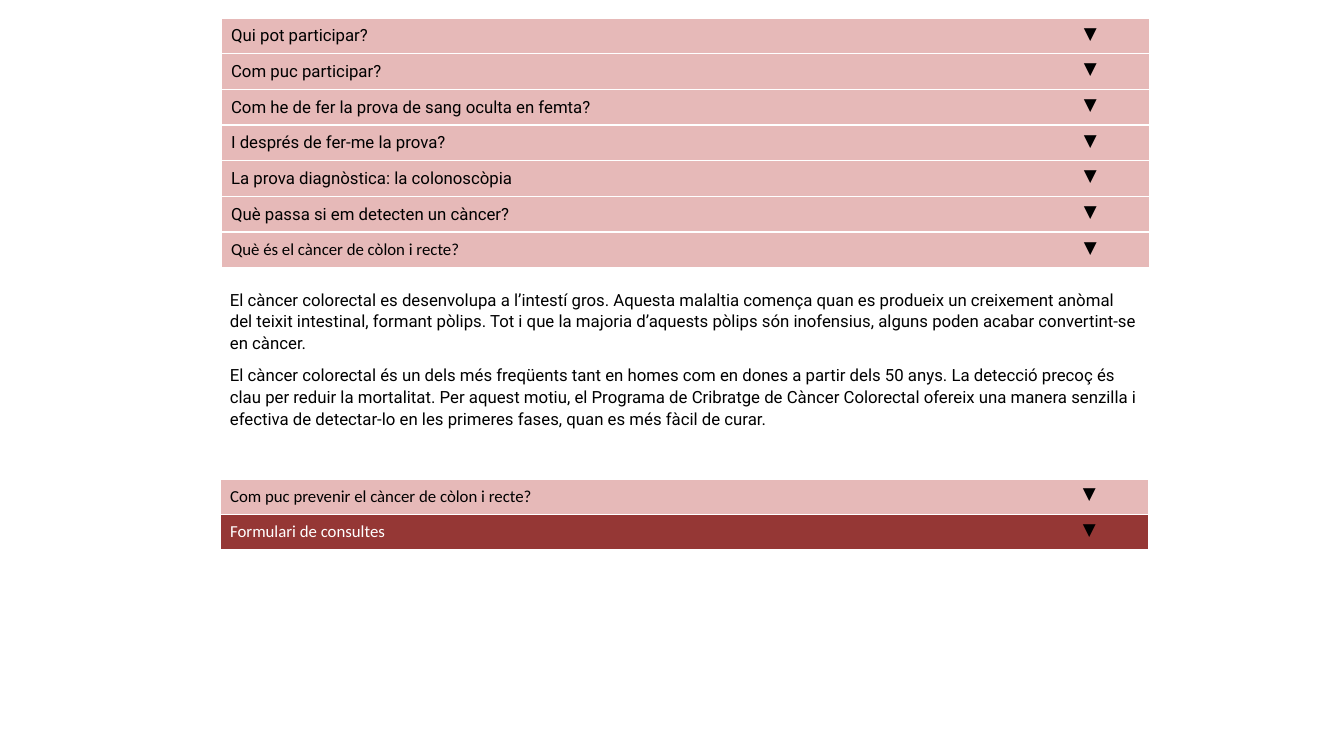
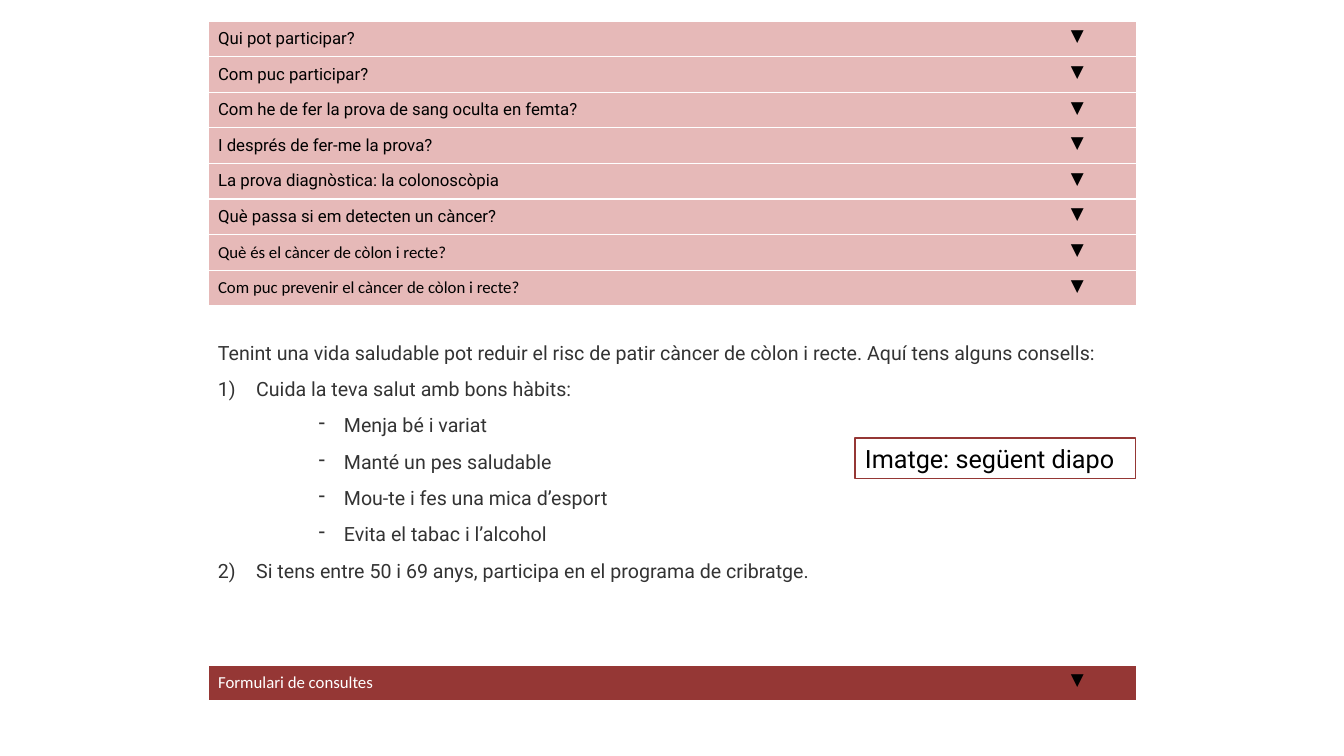
from lxml.etree import SubElement
from pptx import Presentation
from pptx.dml.color import RGBColor
from pptx.enum.text import MSO_ANCHOR, MSO_AUTO_SIZE, PP_ALIGN
from pptx.oxml import parse_xml
from pptx.oxml.ns import qn
from pptx.util import Emu, Inches, Pt

# Shared style
PINK = RGBColor(0xE6, 0xB9, 0xB8)
RED = RGBColor(0x95, 0x37, 0x35)
BLACK = RGBColor(0, 0, 0)
GREY = RGBColor(0x33, 0x33, 0x33)
WHITE = RGBColor(0xFF, 0xFF, 0xFF)
BODY, PLAIN = "Roboto", "Calibri"
SCALE = 914400 / 100.8
COLS = (811, 117)
WIDE = sum(COLS)
NO_STYLE = "{2D5ABB26-0587-4C30-8999-92F81FD0307C}"
MAIN = "http://schemas.openxmlformats.org/drawingml/2006/main"

# Rows: label, font, text colour, fill
ASK = [(label, BODY, BLACK, PINK) for label in (
    "Qui pot participar?",
    "Com puc participar?",
    "Com he de fer la prova de sang oculta en femta?",
    "I després de fer-me la prova?",
    "La prova diagnòstica: la colonoscòpia",
    "Què passa si em detecten un càncer?",
)]
WHAT = ("Què és el càncer de còlon i recte?", PLAIN, BLACK, PINK)
AVOID = ("Com puc prevenir el càncer de còlon i recte?", PLAIN, BLACK, PINK)
FORM = ("Formulari de consultes", PLAIN, WHITE, RED)

# Lists: level, left margin, hanging indent, bullet tag and its attributes
NUMBER = (0, 0.38, 0.38, "a:buAutoNum", {"type": "arabicParenR"})
DASH = (1, 1.25, 0.25, "a:buChar", {"char": "-"})


def px(size):
    return Emu(round(size * SCALE))


class Deck:
    def __init__(self):
        self.file = Presentation()
        self.file.slide_width, self.file.slide_height = px(1344), px(756)
        self.slide = None

    def page(self):
        self.slide = self.file.slides.add_slide(self.file.slide_layouts[6])

    def style(self, para, size, face, color):
        para.font.size = Pt(size)
        para.font.name = face
        para.font.color.rgb = color

    def edge(self, cell, sides):
        """Draw thin white borders; they must precede the cell's fill."""
        props = cell._tc.get_or_add_tcPr()
        for spot, side in enumerate(sides):
            props.insert(spot, parse_xml(
                f'<a:ln{side} xmlns:a="{MAIN}" w="12700"><a:solidFill>'
                f'<a:srgbClr val="{WHITE}"/></a:solidFill></a:ln{side}>'))

    def menu(self, left, top, height, rows):
        """Stack evenly spaced drop-down bars."""
        table = self.slide.shapes.add_table(
            len(rows), 2, px(left), px(top), px(WIDE), px(height)).table
        table.first_row = table.horz_banding = False
        table._tbl.tblPr.find(qn("a:tableStyleId")).text = NO_STYLE
        for col, width in zip(table.columns, COLS):
            col.width = px(width)
        for row, (label, face, color, fill) in zip(table.rows, rows):
            name, arrow = row.cells
            name.text, arrow.text = label, "▼"
            name.vertical_anchor = MSO_ANCHOR.MIDDLE
            self.style(name.text_frame.paragraphs[0], 12, face, color)
            mark = arrow.text_frame.paragraphs[0]
            mark.alignment = PP_ALIGN.CENTER
            self.style(mark, 12, PLAIN, BLACK)
            for cell, sides in ((name, "LTB"), (arrow, "TB")):
                cell.fill.solid()
                cell.fill.fore_color.rgb = fill
                self.edge(cell, sides)

    def box(self, left, top, width, height):
        shape = self.slide.shapes.add_textbox(
            px(left), px(top), px(width), px(height))
        shape.text_frame.word_wrap = True
        shape.text_frame.auto_size = MSO_AUTO_SIZE.SHAPE_TO_FIT_TEXT
        return shape

    def bullet(self, para, kind):
        level, margin, hang, tag, attrs = kind
        para.level = level
        props = para._p.get_or_add_pPr()
        props.set("marL", str(Inches(margin)))
        props.set("indent", str(-Inches(hang)))
        SubElement(props, qn(tag), attrs)

    def prose(self, left, top, height, size, color, items):
        """Write paragraphs given as (text, list kind or None)."""
        frame = self.box(left, top, WIDE, height).text_frame
        for spot, (text, kind) in enumerate(items):
            para = frame.add_paragraph() if spot else frame.paragraphs[0]
            para.text = text
            para.line_spacing = 1.07
            para.space_after = Pt(8)
            if kind:
                self.bullet(para, kind)
            self.style(para, size, BODY, color)

    def note(self, left, top, width, height, text):
        shape = self.box(left, top, width, height)
        shape.line.color.rgb = RED
        shape.line.width = Pt(0.75)
        para = shape.text_frame.paragraphs[0]
        para.text = text
        self.style(para, 18, BODY, BLACK)


def main():
    deck = Deck()

    # What the disease is
    deck.page()
    deck.prose(220, 283, 151, 12, BLACK, [
        ("El càncer colorectal es desenvolupa a l’intestí gros. Aquesta "
         "malaltia comença quan es produeix un creixement anòmal del teixit "
         "intestinal, formant pòlips. Tot i que la majoria d’aquests pòlips "
         "són inofensius, alguns poden acabar convertint-se en càncer.", None),
        ("El càncer colorectal és un dels més freqüents tant en homes com en "
         "dones a partir dels 50 anys. La detecció precoç és clau per reduir "
         "la mortalitat. Per aquest motiu, el Programa de Cribratge de Càncer "
         "Colorectal ofereix una manera senzilla i efectiva de detectar-lo en "
         "les primeres fases, quan es més fàcil de curar.", None),
    ])
    deck.menu(221, 18, 250, ASK + [WHAT])
    deck.menu(220, 479, 71, [AVOID, FORM])

    # How to prevent it
    deck.page()
    deck.prose(208, 334, 291, 14, GREY, [
        ("Tenint una vida saludable pot reduir el risc de patir càncer de "
         "còlon i recte. Aquí tens alguns consells:", None),
        ("Cuida la teva salut amb bons hàbits:", NUMBER),
        ("Menja bé i variat", DASH),
        ("Manté un pes saludable", DASH),
        ("Mou-te i fes una mica d’esport", DASH),
        ("Evita el tabac i l’alcohol", DASH),
        ("Si tens entre 50 i 69 anys, participa en el programa de cribratge.",
         NUMBER),
    ])
    deck.menu(208, 21, 285, ASK + [WHAT, AVOID])
    deck.menu(208, 665, 36, [FORM])
    deck.note(855, 438, 281, 41, "Imatge: següent diapo")

    deck.file.save("out.pptx")


if __name__ == "__main__":
    main()
